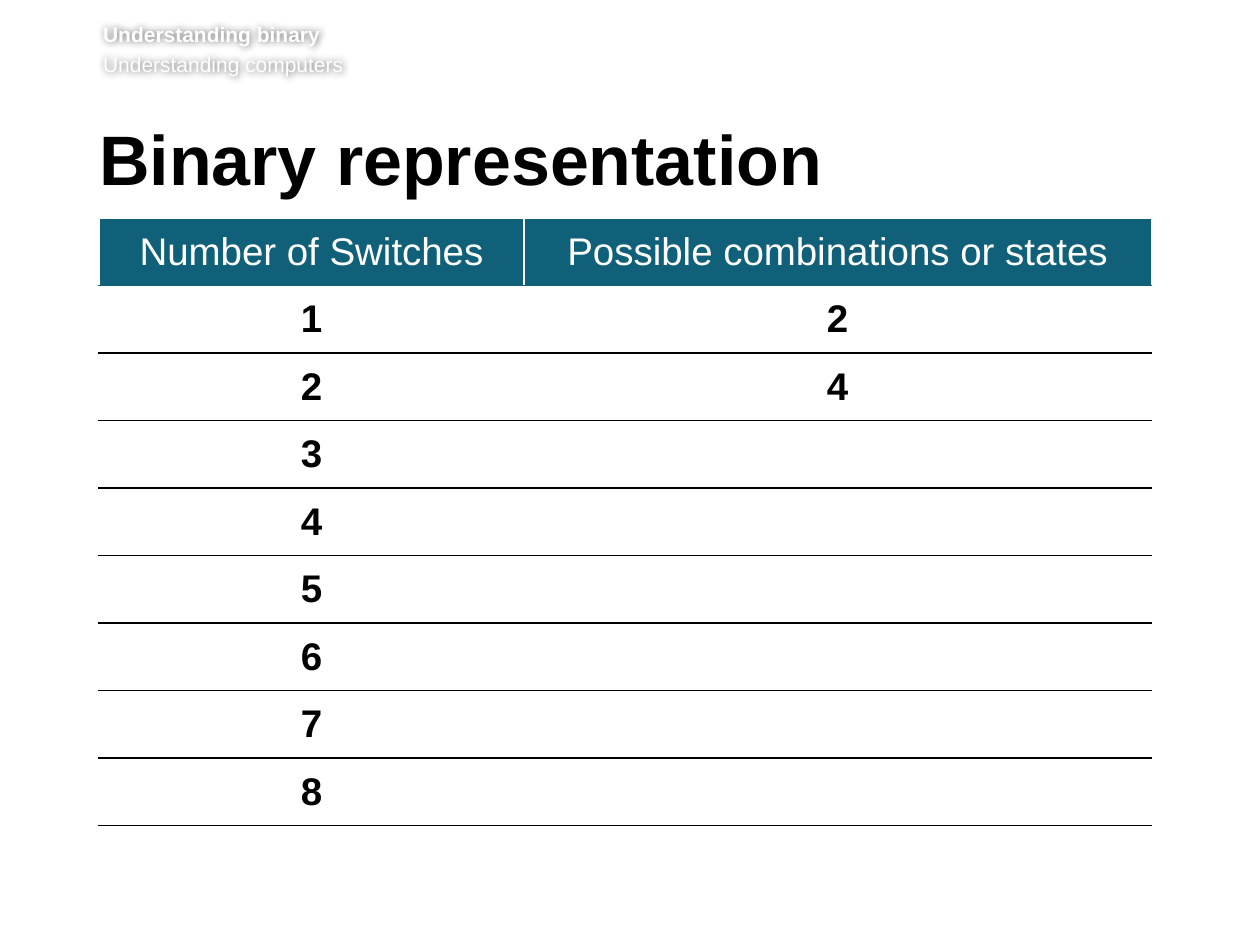
from dataclasses import dataclass

from lxml import etree
from pptx import Presentation
from pptx.dml.color import RGBColor
from pptx.enum import text
from pptx.oxml import ns
from pptx.util import Cm, Pt


@dataclass(frozen=True)
class Theme:
    font: str = "Arial"
    ink: str = "000000"
    paper: str = "FFFFFF"
    accent: str = "0F6078"
    strap_size: int = 12
    title_size: int = 40
    table_size: int = 22


def add_xml(parent, tag, **attrs):
    return etree.SubElement(parent, ns.qn(tag), attrs)


class SlideBuilder:
    def __init__(self, prs, theme):
        self.theme = theme
        self.s = prs.slides.add_slide(prs.slide_layouts[5])

    def style(self, p, size, color, bold=False):
        p.font.name = self.theme.font
        p.font.size = Pt(size)
        p.font.bold = bold
        p.font.color.rgb = RGBColor.from_string(color)

    def strap(self, lines, left, top, width, height):
        """Small white lines, the first one bold, legible through a soft shadow."""
        sp = self.s.shapes.add_textbox(left, top, width, height)
        tf = sp.text_frame
        tf.word_wrap = True
        tf.margin_left = tf.margin_right = tf.margin_top = 0
        tf.text = "\n".join(lines)
        for i, p in enumerate(tf.paragraphs):
            self.style(p, self.theme.strap_size, self.theme.paper, bold=i == 0)
            if i:
                p.space_before = Pt(2.9)
        effects = add_xml(sp._element.spPr, "a:effectLst")
        shadow = add_xml(effects, "a:outerShdw", blurRad="50800", dist="0")
        color = add_xml(shadow, "a:srgbClr", val=self.theme.ink)
        add_xml(color, "a:alpha", val="60000")

    def title(self, words, left, top, width, height):
        sp = self.s.shapes.title
        sp.left, sp.top, sp.width, sp.height = left, top, width, height
        tf = sp.text_frame
        tf.text = words
        tf.margin_left = 0
        tf.auto_size = text.MSO_AUTO_SIZE.NONE
        tf.vertical_anchor = text.MSO_ANCHOR.TOP
        p = tf.paragraphs[0]
        p.alignment = text.PP_ALIGN.LEFT
        p.line_spacing = Pt(39)
        self.style(p, self.theme.title_size, self.theme.ink, bold=True)

    def borders(self, cell, top, bottom):
        tc_pr = cell._tc.get_or_add_tcPr()
        paper = self.theme.paper
        for side, color in zip("LRTB", (paper, paper, top, bottom)):
            line = add_xml(tc_pr, f"a:ln{side}", w=str(Pt(1)))
            add_xml(add_xml(line, "a:solidFill"), "a:srgbClr", val=color)

    def table(self, rows, left, top, widths, row_height):
        t = self.theme
        frame = self.s.shapes.add_table(len(rows), len(widths), left, top,
                                        sum(widths), row_height * len(rows))
        table = frame.table
        table.first_row = table.horz_banding = False
        for column, width in zip(table.columns, widths):
            column.width = width
        rules = [t.paper, t.accent] + [t.ink] * (len(rows) - 1)
        for i, row in enumerate(rows):
            table.rows[i].height = row_height
            for j, value in enumerate(row):
                cell = table.cell(i, j)
                self.borders(cell, rules[i], rules[i + 1])
                if i == 0:
                    cell.fill.solid()
                    cell.fill.fore_color.rgb = RGBColor.from_string(t.accent)
                else:
                    cell.fill.background()
                cell.vertical_anchor = text.MSO_ANCHOR.MIDDLE
                cell.text = value
                p = cell.text_frame.paragraphs[0]
                p.alignment = text.PP_ALIGN.CENTER
                self.style(p, t.table_size, t.ink if i else t.paper, bold=i > 0)


def main():
    prs = Presentation()
    prs.slide_width, prs.slide_height = Cm(25.4), Cm(19.05)
    slide = SlideBuilder(prs, Theme())
    slide.strap(["Understanding binary", "Understanding computers"],
                Cm(2.08), Cm(0.43), Cm(22.4), Cm(1.24))
    slide.title("Binary representation", Cm(2), Cm(2.51), Cm(21.72), Cm(1.85))
    states = {1: "2", 2: "4"}
    rows = [("Number of Switches", "Possible combinations or states")]
    rows += [(str(n), states.get(n, "")) for n in range(1, 9)]
    slide.table(rows, Cm(2), Cm(4.4), [Cm(8.56), Cm(12.65)], Cm(1.36))
    prs.save("out.pptx")


if __name__ == "__main__":
    main()
